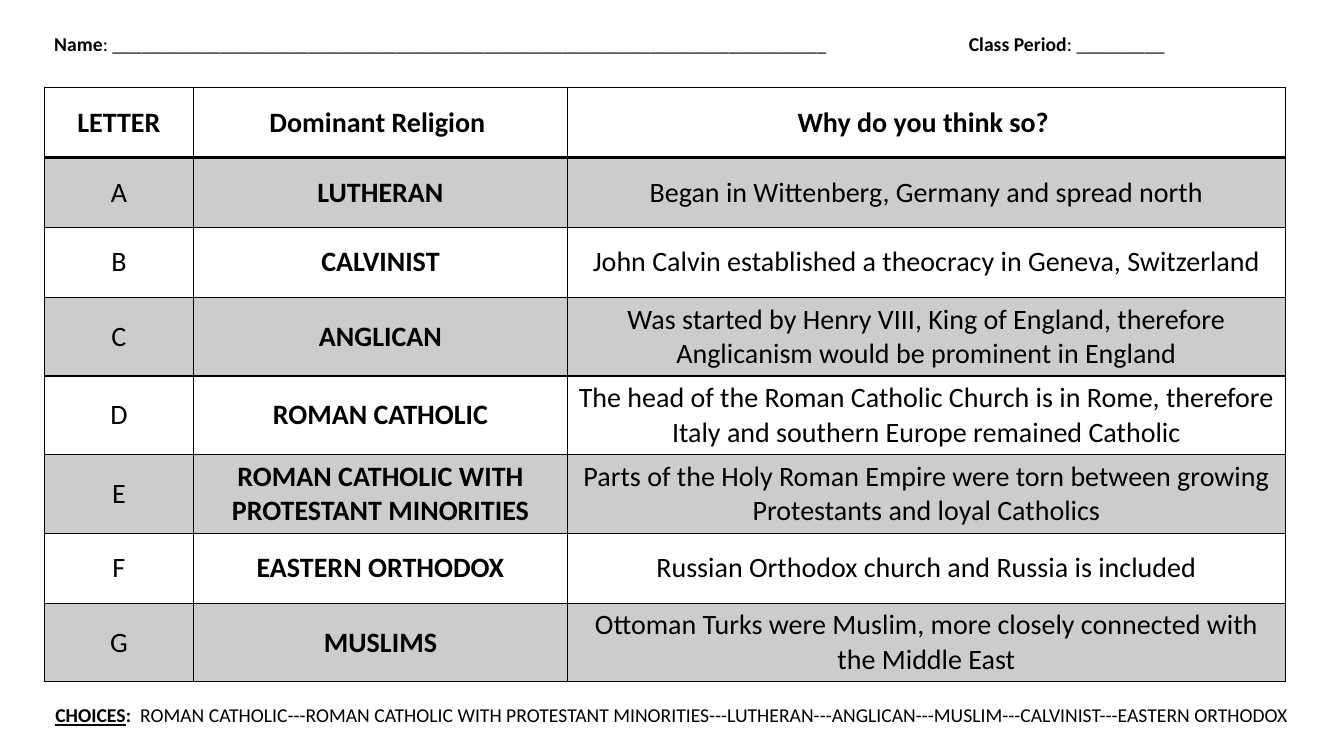
from dataclasses import dataclass

from lxml import etree
from pptx import Presentation
from pptx.dml.color import RGBColor
from pptx.enum.text import MSO_ANCHOR, PP_ALIGN
from pptx.oxml.ns import qn
from pptx.slide import Slide
from pptx.table import _Cell
from pptx.text.text import _Paragraph
from pptx.util import Inches, Pt

CENTER = PP_ALIGN.CENTER
LEFT = PP_ALIGN.LEFT
MIDDLE = MSO_ANCHOR.MIDDLE

BLACK = RGBColor(0x00, 0x00, 0x00)
FONT = "Calibri"
SLIDE_WIDTH = Inches(13.33)
SLIDE_HEIGHT = Inches(7.5)
BAND_OPACITY = 20

TABLE_LEFT = 3.3
TABLE_TOP = 11.6
COLUMN_SHARES = (11.1, 27.83, 53.41)
ROW_SHARE = 9.24
LINE_SHARE = 11.33
CLASS_PERIOD_TAB = 68.05


@dataclass(frozen=True)
class Phrase:
    text: str
    bold: bool = False
    underline: bool = False


@dataclass(frozen=True)
class TextLine:
    left: float
    top: float
    width: float
    align: PP_ALIGN
    phrases: tuple[Phrase, ...]
    tab: float = 0


@dataclass(frozen=True)
class Region:
    letter: str
    religion: str
    reason: str


HEADER = Region("LETTER", "Dominant Religion ", "Why do you think so? ")
REGIONS = (
    Region("A", "LUTHERAN", "Began in Wittenberg, Germany and spread north"),
    Region("B", "CALVINIST", "John Calvin established a theocracy in Geneva, Switzerland"),
    Region("C", "ANGLICAN", "Was started by Henry VIII, King of England, therefore "
           "Anglicanism would be prominent in England"),
    Region("D", "ROMAN CATHOLIC", "The head of the Roman Catholic Church is in Rome, therefore "
           "Italy and southern Europe remained Catholic"),
    Region("E", "ROMAN CATHOLIC WITH PROTESTANT MINORITIES",
           "Parts of the Holy Roman Empire were torn between growing "
           "Protestants and loyal Catholics"),
    Region("F", "EASTERN ORTHODOX", "Russian Orthodox church and Russia is included"),
    Region("G", "MUSLIMS", "Ottoman Turks were Muslim, more closely connected with the Middle East"),
)
CHOICES = ("ROMAN CATHOLIC", "ROMAN CATHOLIC WITH PROTESTANT MINORITIES", "LUTHERAN",
           "ANGLICAN", "MUSLIM", "CALVINIST", "EASTERN ORTHODOX")

TEXT_LINES = (
    TextLine(TABLE_LEFT, 0.27, 95.57, LEFT, (
        Phrase("Name", bold=True),
        Phrase(": " + "_" * 73 + "\t"),
        Phrase("Class Period", bold=True),
        Phrase(": " + "_" * 9),
    ), tab=CLASS_PERIOD_TAB),
    TextLine(0, 89.07, 100, CENTER, (
        Phrase("CHOICES", bold=True, underline=True),
        Phrase(":  ", bold=True),
        Phrase("---".join(CHOICES)),
    )),
)


def across(share: float) -> int:
    return round(SLIDE_WIDTH * share / 100)


def down(share: float) -> int:
    return round(SLIDE_HEIGHT * share / 100)


def style_paragraph(paragraph: _Paragraph, size: int, align: PP_ALIGN) -> None:
    paragraph.alignment = align
    paragraph.font.name = FONT
    paragraph.font.size = Pt(size)
    paragraph.font.color.rgb = BLACK


def add_text_line(slide: Slide, line: TextLine) -> None:
    box = slide.shapes.add_textbox(across(line.left), down(line.top),
                                   across(line.width), down(LINE_SHARE))
    frame = box.text_frame
    frame.word_wrap = True
    frame.vertical_anchor = MIDDLE
    paragraph = frame.paragraphs[0]
    paragraph.line_spacing = 0.9
    if line.tab:
        properties = paragraph._p.get_or_add_pPr()
        tabs = etree.SubElement(properties, qn("a:tabLst"))
        etree.SubElement(tabs, qn("a:tab"), pos=str(across(line.tab)), algn="l")
    style_paragraph(paragraph, 14, line.align)
    for phrase in line.phrases:
        run = paragraph.add_run()
        run.text = phrase.text
        run.font.bold = phrase.bold
        run.font.underline = phrase.underline


def add_borders(cell: _Cell, bottom_width: int) -> None:
    properties = cell._tc.get_or_add_tcPr()
    for side, width in (("L", 1), ("R", 1), ("T", 1), ("B", bottom_width)):
        border = etree.SubElement(properties, qn(f"a:ln{side}"), w=str(Pt(width)))
        fill = etree.SubElement(border, qn("a:solidFill"))
        etree.SubElement(fill, qn("a:srgbClr"), val=str(BLACK))


def fill_cell(cell: _Cell, shaded: bool) -> None:
    if not shaded:
        cell.fill.background()
        return
    cell.fill.solid()
    cell.fill.fore_color.rgb = BLACK
    color = cell._tc.tcPr.find(qn("a:solidFill")).find(qn("a:srgbClr"))
    etree.SubElement(color, qn("a:alpha"), val=str(BAND_OPACITY * 1000))


def add_religion_table(slide: Slide) -> None:
    rows = (HEADER, *REGIONS)
    table = slide.shapes.add_table(
        len(rows), len(COLUMN_SHARES), across(TABLE_LEFT), down(TABLE_TOP),
        across(sum(COLUMN_SHARES)), down(ROW_SHARE * len(rows))).table
    table.first_row = False
    table.horz_banding = False
    for column, share in zip(table.columns, COLUMN_SHARES):
        column.width = across(share)
    for row_index, region in enumerate(rows):
        is_header = region is HEADER
        table.rows[row_index].height = down(ROW_SHARE)
        for column_index, text in enumerate((region.letter, region.religion, region.reason)):
            cell = table.cell(row_index, column_index)
            cell.text = text
            cell.vertical_anchor = MIDDLE
            paragraph = cell.text_frame.paragraphs[0]
            style_paragraph(paragraph, 20, CENTER)
            paragraph.font.bold = is_header or text == region.religion
            add_borders(cell, 2 if is_header else 1)
            fill_cell(cell, shaded=row_index % 2 == 1)


def main() -> None:
    presentation = Presentation()
    presentation.slide_width = SLIDE_WIDTH
    presentation.slide_height = SLIDE_HEIGHT
    slide = presentation.slides.add_slide(presentation.slide_layouts[6])
    add_religion_table(slide)
    for line in TEXT_LINES:
        add_text_line(slide, line)
    presentation.save("out.pptx")


if __name__ == "__main__":
    main()
